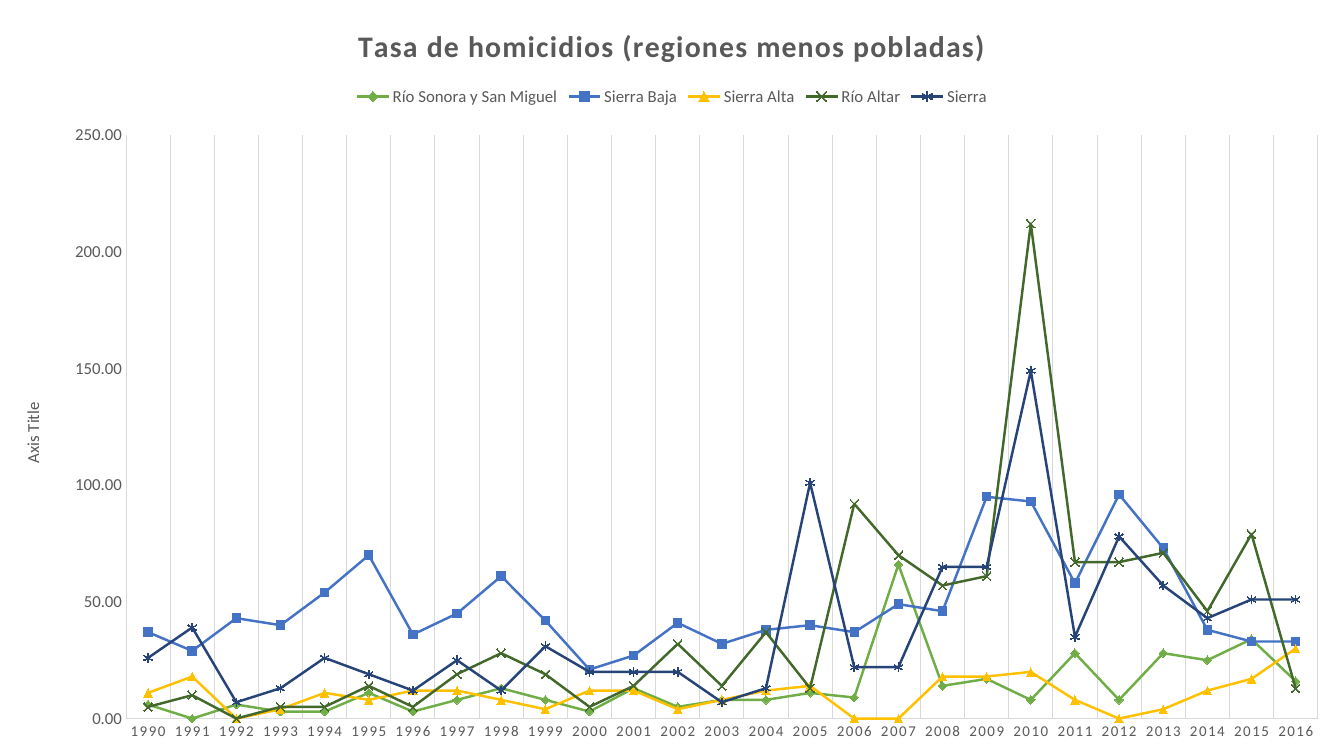
import pptx
import pptx.chart.data
import pptx.dml.color
import pptx.enum.chart
import pptx.oxml
import pptx.oxml.ns
import pptx.util

Inches, Pt = pptx.util.Inches, pptx.util.Pt
XL = pptx.enum.chart
MARK = XL.XL_MARKER_STYLE
WIDTH, HEIGHT = 13.33, 7.5

COLORS = {"text": "595959", "rule": "D9D9D9", "white": "FFFFFF", "green": "70AD47",
          "blue": "4472C4", "gold": "FFC000", "forest": "43682B", "navy": "264478"}

YEARS = [str(year) for year in range(1990, 2017)]

# Region, colour, marker, filled marker, homicide rate per year
REGIONS = [
    ("Río Sonora y San Miguel", "green", MARK.DIAMOND, True,
     [6, 0, 6, 3, 3, 11, 3, 8, 13, 8, 3, 13, 5, 8, 8, 11, 9, 66, 14, 17, 8, 28, 8, 28, 25, 34, 16]),
    ("Sierra Baja", "blue", MARK.SQUARE, True,
     [37, 29, 43, 40, 54, 70, 36, 45, 61, 42, 21, 27, 41, 32, 38, 40, 37, 49, 46, 95, 93, 58, 96,
      73, 38, 33, 33]),
    ("Sierra Alta", "gold", MARK.TRIANGLE, True,
     [11, 18, 0, 4, 11, 8, 12, 12, 8, 4, 12, 12, 4, 8, 12, 14, 0, 0, 18, 18, 20, 8, 0, 4, 12, 17, 30]),
    ("Río Altar", "forest", MARK.X, False,
     [5, 10, 0, 5, 5, 14, 5, 19, 28, 19, 5, 14, 32, 14, 37, 13, 92, 70, 57, 61, 212, 67, 67, 71,
      46, 79, 13]),
    ("Sierra", "navy", MARK.STAR, False,
     [26, 39, 7, 13, 26, 19, 12, 25, 12, 31, 20, 20, 20, 7, 13, 101, 22, 22, 65, 65, 149, 35, 78,
      57, 43, 51, 51]),
]


class ChartSlide:
    """Holds the text style and the slide being built."""

    def __init__(self, prs):
        self.style = {"name": "Calibri", "size": Pt(12), "bold": False}
        self.s = prs.slides.add_slide(prs.slide_layouts[6])
        self.s.background.fill.solid()
        self.s.background.fill.fore_color.rgb = self.rgb("white")

    def rgb(self, name):
        return pptx.dml.color.RGBColor.from_string(COLORS[name])

    def font(self, font, spacing=None, **changes):
        for key, value in {**self.style, **changes}.items():
            setattr(font, key, value)
        font.color.rgb = self.rgb("text")
        if spacing:
            font._rPr.set("spc", str(spacing))

    def line(self, line, color, width):
        line.color.rgb = self.rgb(color)
        line.width = Pt(width)

    def chart(self, regions, left, top, width, height):
        data = pptx.chart.data.CategoryChartData(number_format="0.00")
        data.categories = YEARS
        for name, *_, rates in regions:
            data.add_series(name, rates)
        chart = self.s.shapes.add_chart(
            XL.XL_CHART_TYPE.LINE_MARKERS, Inches(left), Inches(top), Inches(width),
            Inches(height), data).chart
        self.font(chart.font)
        chart.plots[0].vary_by_categories = False
        for series, (_, color, marker, filled, _) in zip(chart.plots[0].series, regions):
            self.series(series, color, marker, filled)
        return chart

    def series(self, series, color, marker, filled):
        series.smooth = False
        self.line(series.format.line, color, 1.75)
        series.marker.style, series.marker.size = marker, 6
        self.line(series.marker.format.line, color, 0.75)
        fill = series.marker.format.fill
        if filled:
            fill.solid()
            fill.fore_color.rgb = self.rgb(color)
        else:
            fill.background()

    def title(self, owner, text, **changes):
        tf = owner.text_frame
        r = tf.paragraphs[0].add_run()
        r.text = text
        self.font(r.font, **changes)
        return tf

    def axis(self, axis, grid, **changes):
        axis.major_tick_mark = axis.minor_tick_mark = XL.XL_TICK_MARK.NONE
        self.line(axis.format.line, "rule", 0.75)
        axis.has_major_gridlines = grid
        if grid:
            self.line(axis.major_gridlines.format.line, "rule", 0.75)
        self.font(axis.tick_labels.font, **changes)

    def legend(self, chart):
        chart.has_legend = True
        chart.legend.position = XL.XL_LEGEND_POSITION.TOP
        chart.legend.include_in_layout = False
        self.font(chart.legend.font)

    def plot_area(self, chart, left, top, width, height):
        area = chart._chartSpace.chart.plotArea
        for old in area.findall(pptx.oxml.ns.qn("c:layout")):
            area.remove(old)
        box = {"x": left / WIDTH, "y": top / HEIGHT, "w": width / WIDTH, "h": height / HEIGHT}
        sizes = "".join(f'<c:{key} val="{value}"/>' for key, value in box.items())
        area.insert(0, pptx.oxml.parse_xml(
            f'<c:layout {pptx.oxml.ns.nsdecls("c")}><c:manualLayout>'
            '<c:layoutTarget val="inner"/><c:xMode val="edge"/><c:yMode val="edge"/>'
            f'{sizes}</c:manualLayout></c:layout>'))


def main():
    prs = pptx.Presentation()
    prs.slide_width, prs.slide_height = Inches(WIDTH), Inches(HEIGHT)
    slide = ChartSlide(prs)

    # Line chart over the whole slide
    chart = slide.chart(REGIONS, 0, 0, WIDTH, HEIGHT)
    slide.plot_area(chart, 1.25, 1.34, 11.82, 5.79)

    # Title and legend
    chart.has_title = True
    slide.title(chart.chart_title, "Tasa de homicidios (regiones menos pobladas)",
                size=Pt(21.28), bold=True, spacing=100)
    chart.chart_title.include_in_layout = False
    slide.legend(chart)

    # Axes
    slide.axis(chart.category_axis, grid=True, size=Pt(10.64), spacing=120)
    rates = chart.value_axis
    slide.axis(rates, grid=False)
    for key, value in {"minimum_scale": 0, "maximum_scale": 250, "major_unit": 50}.items():
        setattr(rates, key, value)
    rates.tick_labels.number_format = "0.00"
    rates.tick_labels.number_format_is_linked = False
    rates.has_title = True
    tf = slide.title(rates.axis_title, "Axis Title")
    tf._txBody.bodyPr.set("rot", "-5400000")
    tf._txBody.bodyPr.set("vert", "horz")

    prs.save("out.pptx")


if __name__ == "__main__":
    main()
